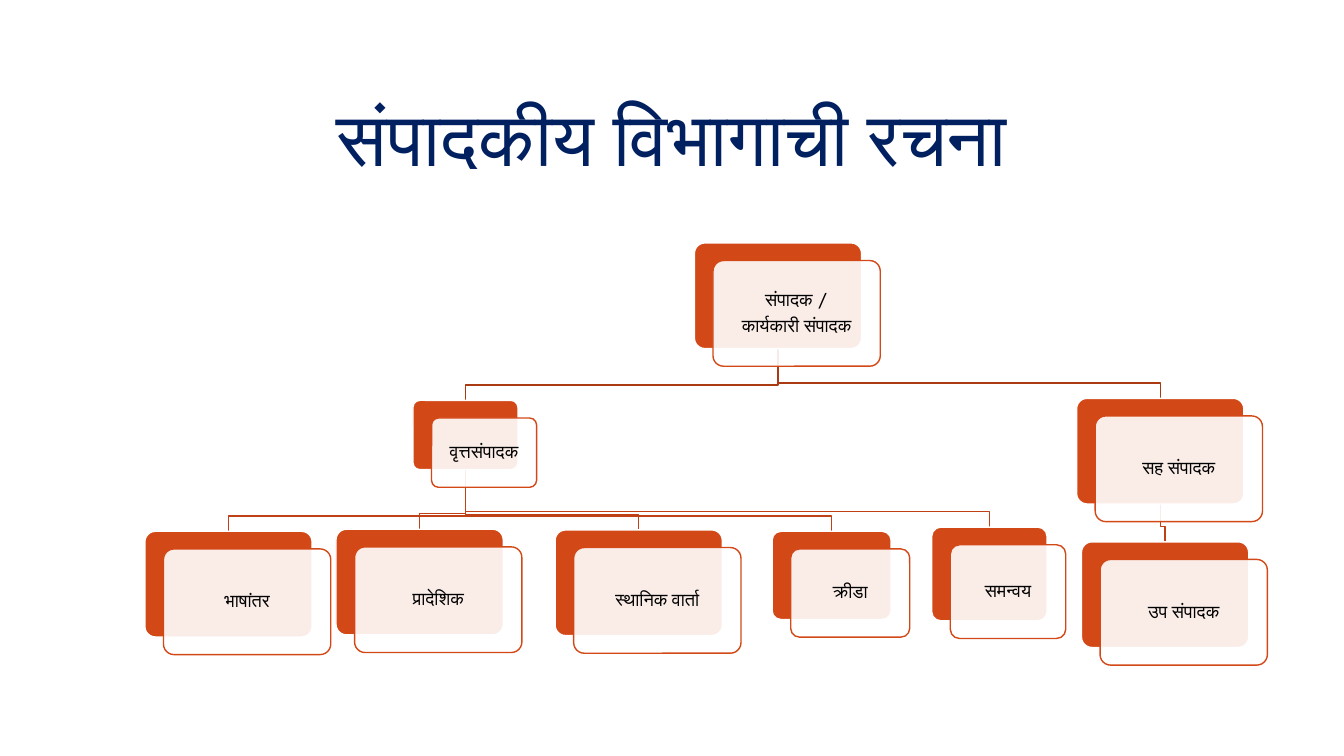
from lxml.etree import SubElement
from pptx import Presentation
from pptx.dml.color import RGBColor
from pptx.enum.shapes import MSO_SHAPE
from pptx.enum.text import MSO_ANCHOR, PP_ALIGN
from pptx.oxml.ns import qn
from pptx.util import Pt

COLORS = {"title": "002060", "text": "000000", "card": "D34817",
          "white": "FFFFFF", "top": "A93A12", "low": "BF4115"}
SHIFT_X, SHIFT_Y = 13.3, 12.6  # panel offset from its card
RISE = 11  # height of a line's last leg

# key: (text, parent, left, top, width, height)
STAFF = {
    "editor": ("संपादक /\nकार्यकारी संपादक", None, 496, 173.5, 119.5, 75.5),
    "news": ("वृत्तसंपादक", "editor", 295, 286, 75, 49.5),
    "translation": ("भाषांतर", "news", 103.5, 379.5, 119.5, 75.5),
    "region": ("प्रादेशिक", "news", 240, 378, 119.5, 75.5),
    "local": ("स्थानिक वार्ता", "news", 396.5, 378.5, 119.5, 75.5),
    "sports": ("क्रीडा", "news", 551.5, 379.5, 85, 63),
    "liaison": ("समन्वय", "news", 665.5, 376.5, 82.5, 67),
    "joint": ("सह संपादक", "editor", 769, 284.5, 119.5, 75.5),
    "sub": ("उप संपादक", "joint", 772.5, 387, 119.5, 75.5),
}


def write(shape, text, font, size, color, after=0):
    frame = shape.text_frame
    frame.word_wrap = True
    frame.vertical_anchor = MSO_ANCHOR.MIDDLE
    frame.text = text
    for para in frame.paragraphs:
        para.alignment = PP_ALIGN.CENTER
        para.line_spacing = 0.9
        para.space_after = Pt(after)
        para.font.name = font
        para.font.size = Pt(size)
        para.font.color.rgb = RGBColor.from_string(COLORS[color])
    return frame


def add_box(left, top, width, height, fill, line):
    box = shapes.add_shape(MSO_SHAPE.ROUNDED_RECTANGLE,
                           Pt(left), Pt(top), Pt(width), Pt(height))
    box.adjustments[0] = 0.1
    box.shadow.inherit = False
    box.fill.solid()
    box.fill.fore_color.rgb = RGBColor.from_string(COLORS[fill])
    box.line.color.rgb = RGBColor.from_string(COLORS[line])
    box.line.width = Pt(1)
    return box


deck = Presentation()
deck.slide_width, deck.slide_height = Pt(960), Pt(540)
shapes = deck.slides.add_slide(deck.slide_layouts[6]).shapes

title = shapes.add_textbox(Pt(84), Pt(38), Pt(792), Pt(127))
write(title, "संपादकीय विभागाची रचना", "Arial Narrow", 54, "title")

# Lines lie behind all cards
for text, boss, left, top, width, height in reversed(STAFF.values()):
    if boss is None:
        continue
    boss_left, boss_top, boss_width, boss_height = STAFF[boss][2:]
    start = boss_left + boss_width / 2
    end = left + width / 2
    bend = top - RISE
    route = shapes.build_freeform(Pt(start), Pt(boss_top + boss_height))
    route.add_line_segments([(Pt(start), Pt(bend)), (Pt(end), Pt(bend)),
                             (Pt(end), Pt(top))], close=False)
    link = route.convert_to_shape()
    link.shadow.inherit = False
    link.fill.background()
    tone = "top" if boss == "editor" else "low"
    link.line.color.rgb = RGBColor.from_string(COLORS[tone])
    link.line.width = Pt(1)

for text, boss, left, top, width, height in STAFF.values():
    add_box(left, top, width, height, "card", "white")
    panel = add_box(left + SHIFT_X, top + SHIFT_Y, width, height, "white", "card")
    tint = panel.fill._xPr.find(qn("a:solidFill"))[0]
    SubElement(tint, qn("a:alpha")).set("val", "90000")
    frame = write(panel, text, "TeX Gyre Bonum", 13, "text", 4.5)
    frame.margin_left = frame.margin_right = Pt(3.6)
    frame.margin_top = frame.margin_bottom = Pt(3.6)

deck.save("out.pptx")
